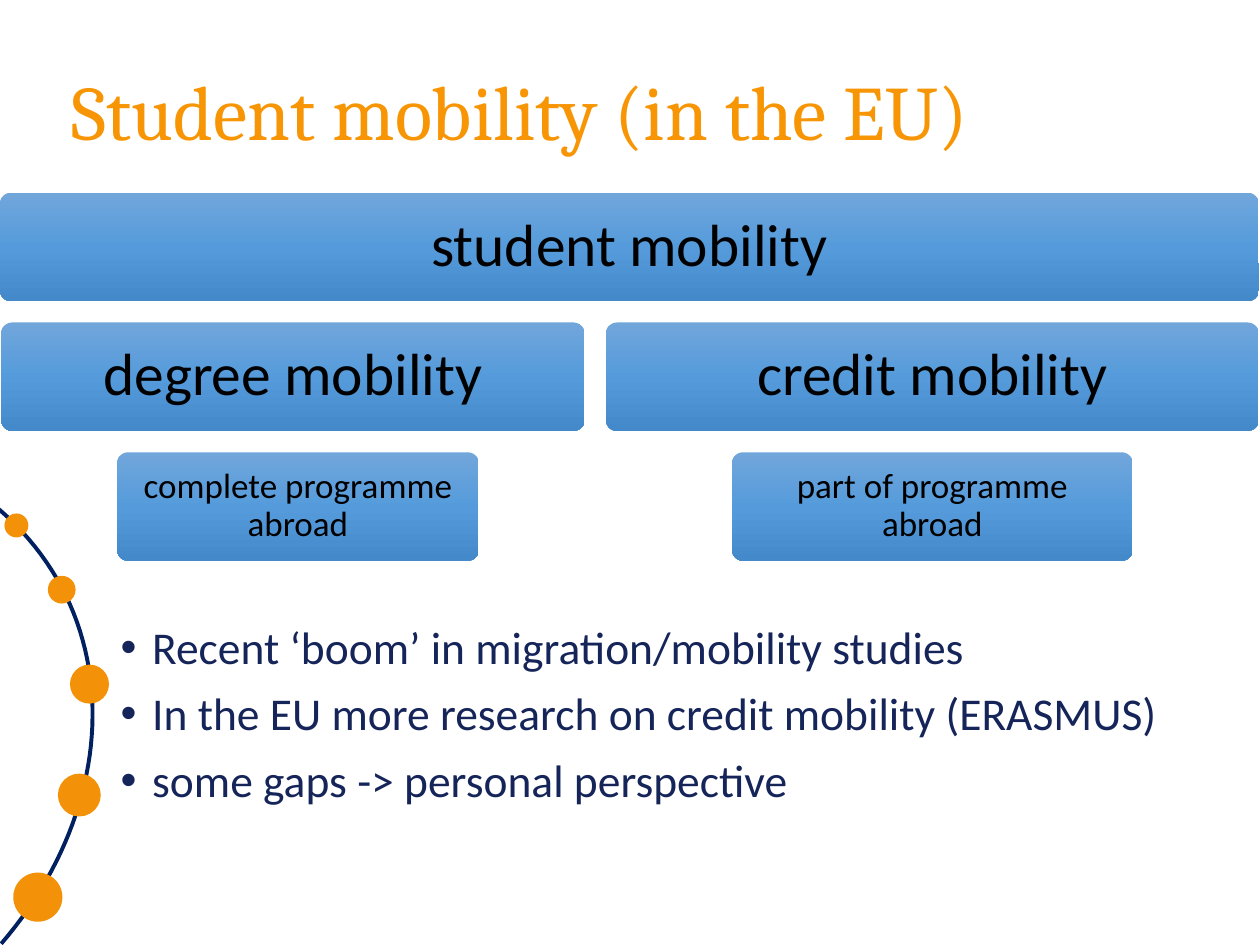
import copy
import pptx
import pptx.util
import pptx.dml.color
import pptx.enum.shapes
import pptx.enum.text
import pptx.oxml.ns
from lxml import etree

THEME = {
    "orange": "F79505", "dot": "F39208", "arc": "002060",
    "body": "162559", "box_text": "000000",
    "gradient": [(0, "71A6DB"), (0.5, "559BDB"), (1, "448ACA")],
    "heading_font": "Cambria", "text_font": "Calibri",
    "title_size": 44, "large": 34, "small": 20, "bullet_size": 26,
}
WIDTH, HEIGHT = 10, 7.5
TITLE = "Student mobility (in the EU)"
BOXES = [
    ("student mobility", 0, 0, 9.99, "large"),
    ("degree mobility", 1, 0.01, 4.63, "large"),
    ("credit mobility", 1, 4.81, 5.18, "large"),
    ("complete programme abroad", 2, 0.93, 2.87, "small"),
    ("part of programme abroad", 2, 5.81, 3.18, "small"),
]
ROW_TOP, ROW_PITCH, ROW_HEIGHT = 1.53, 1.03, 0.86
BOX_INSETS = {"large": 0.16, "small": 0.1}
BULLETS = [
    "Recent ‘boom’ in migration/mobility studies",
    "In the EU more research on credit mobility (ERASMUS)",
    "some gaps -> personal perspective",
]
DOTS = [(0.13, 4.17, 0.19), (0.49, 4.68, 0.22), (0.71, 5.43, 0.31),
        (0.63, 6.31, 0.34), (0.3, 7.12, 0.39)]
ARC = [(-0.01, 4.04), (1.01, 4.92), (0.95, 6.4), (0.01, 7.49)]
ARC_STEPS = 48

inches = pptx.util.Inches
qn = pptx.oxml.ns.qn


def rgb(name):
    return pptx.dml.color.RGBColor.from_string(THEME.get(name, name))


def format_paragraph(para, font, size, color):
    para.line_spacing = 0.9
    for span in para.runs:
        span.font.name = THEME[font]
        span.font.size = pptx.util.Pt(THEME[size])
        span.font.color.rgb = rgb(color)


def add_text_box(page, left, top, width, height):
    box = page.shapes.add_textbox(*map(inches, (left, top, width, height)))
    box.text_frame.word_wrap = True
    return box.text_frame


def add_arc(page):
    points = []
    for step in range(ARC_STEPS + 1):
        t = step / ARC_STEPS
        weights = ((1 - t) ** 3, 3 * t * (1 - t) ** 2, 3 * t * t * (1 - t), t ** 3)
        points.append(tuple(inches(sum(w * p[axis] for w, p in zip(weights, ARC)))
                            for axis in (0, 1)))
    builder = page.shapes.build_freeform(*points[0], scale=1)
    builder.add_line_segments(points[1:], close=False)
    arc = builder.convert_to_shape()
    arc.shadow.inherit = False
    arc.fill.background()
    arc.line.color.rgb = rgb("arc")
    arc.line.width = pptx.util.Pt(2.25)


def add_dot(page, x, y, size):
    dot = page.shapes.add_shape(pptx.enum.shapes.MSO_SHAPE.OVAL,
                                *map(inches, (x - size / 2, y - size / 2, size, size)))
    dot.shadow.inherit = False
    dot.fill.solid()
    dot.fill.fore_color.rgb = rgb("dot")
    dot.line.fill.background()


def apply_gradient(shape):
    shape.fill.gradient()
    shape.fill.gradient_angle = 270
    stop_list = shape.element.spPr.find(qn("a:gradFill")).find(qn("a:gsLst"))
    stop_list.append(copy.deepcopy(stop_list[0]))
    for stop, (position, color) in zip(shape.fill.gradient_stops, THEME["gradient"]):
        stop.position = position
        stop.color.rgb = rgb(color)


def add_box(page, label, row, left, width, size):
    box = page.shapes.add_shape(
        pptx.enum.shapes.MSO_SHAPE.ROUNDED_RECTANGLE,
        *map(inches, (left, ROW_TOP + row * ROW_PITCH, width, ROW_HEIGHT)))
    box.adjustments[0] = 0.1
    box.shadow.inherit = False
    box.line.fill.background()
    apply_gradient(box)
    frame = box.text_frame
    frame.word_wrap = True
    frame.vertical_anchor = pptx.enum.text.MSO_ANCHOR.MIDDLE
    inset = inches(BOX_INSETS[size])
    frame.margin_left = frame.margin_right = inset
    frame.margin_top = frame.margin_bottom = inset
    frame.text = label
    para = frame.paragraphs[0]
    para.alignment = pptx.enum.text.PP_ALIGN.CENTER
    format_paragraph(para, "text_font", size, "box_text")


def add_bullets(page):
    frame = add_text_box(page, 0.86, 4.91, WIDTH, 2.23)
    for index, text in enumerate(BULLETS):
        para = frame.add_paragraph() if index else frame.paragraphs[0]
        para.text = text
        properties = para._p.get_or_add_pPr()
        properties.set("marL", str(inches(0.25)))
        properties.set("indent", str(-inches(0.25)))
        etree.SubElement(properties, qn("a:buFont"), typeface="Arial")
        etree.SubElement(properties, qn("a:buChar"), char="•")
        para.space_before = pptx.util.Pt(10 if index else 0)
        format_paragraph(para, "text_font", "bullet_size", "body")


def main():
    deck = pptx.Presentation()
    deck.slide_width, deck.slide_height = inches(WIDTH), inches(HEIGHT)
    page = deck.slides.add_slide(deck.slide_layouts[6])
    add_arc(page)
    for dot in DOTS:
        add_dot(page, *dot)
    title = add_text_box(page, 0.47, 0.29, 9, 1.25)
    title.vertical_anchor = pptx.enum.text.MSO_ANCHOR.MIDDLE
    title.text = TITLE
    format_paragraph(title.paragraphs[0], "heading_font", "title_size", "orange")
    for box in BOXES:
        add_box(page, *box)
    add_bullets(page)
    deck.save("out.pptx")


if __name__ == "__main__":
    main()
